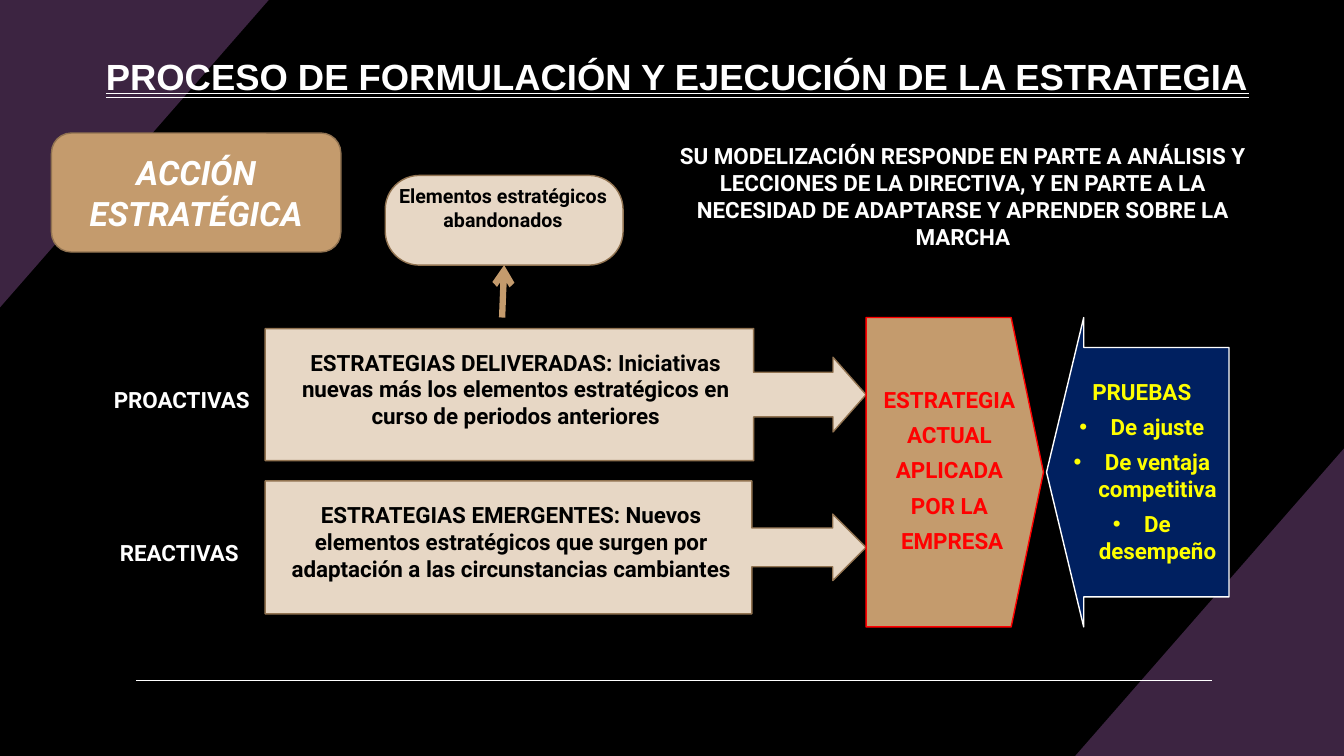
"""Slide on how strategy is formulated and carried out, from proactive and reactive sources to testing."""
from dataclasses import dataclass

from lxml.etree import SubElement
from pptx import Presentation
from pptx.dml.color import RGBColor
from pptx.enum.shapes import MSO_CONNECTOR, MSO_SHAPE
from pptx.enum.text import MSO_ANCHOR, MSO_UNDERLINE, PP_ALIGN
from pptx.oxml.ns import qn
from pptx.util import Inches, Pt


@dataclass(frozen=True)
class Theme:
    black: str = "000000"
    white: str = "FFFFFF"
    plum: str = "3C2441"
    tan: str = "C49B6D"
    brown: str = "917351"
    sand: str = "E7D7C5"
    red: str = "FF0000"
    navy: str = "002060"
    yellow: str = "FFFF00"
    font: str = "Roboto"
    title_font: str = "Arial"
    title: int = 26
    heading: int = 24
    body: int = 16
    small: int = 14


T = Theme()
WIDTH, HEIGHT = Inches(13.33), Inches(7.5)

CORNERS = [
    [(100, 59.33), (100, 100), (80, 100)],
    [(0, 40.67), (0, 0), (20, 0)],
]
FOOT_RULE = [(10.13, 90), (90.17, 90)]
ABANDON_ARROW = [(37.36, 42), (37.51, 35.07)]

SHAPES = {
    "action": (MSO_SHAPE.ROUNDED_RECTANGLE, (3.83, 17.6, 21.53, 15.73), [], T.tan, T.brown),
    "deliberate": (MSO_SHAPE.RIGHT_ARROW_CALLOUT, (19.73, 43.47, 44.71, 17.47),
                   [0.338, 0.283, 0.25, 0.813], T.sand, T.brown),
    "emergent": (MSO_SHAPE.RIGHT_ARROW_CALLOUT, (19.73, 63.6, 44.71, 17.6),
                 [0.291, 0.25, 0.25, 0.81], T.sand, T.brown),
    "current": (MSO_SHAPE.PENTAGON, (64.44, 42, 13.2, 40.93), [0.182], T.tan, T.red),
    "abandoned": (MSO_SHAPE.ROUNDED_RECTANGLE, (28.66, 23.2, 17.7, 11.87), [0.38], T.sand, T.brown),
    "tests": (MSO_SHAPE.LEFT_ARROW, (77.87, 42, 13.58, 40.93), [0.806, 0.204], T.navy, T.white),
}

TITLE = "PROCESO DE FORMULACIÓN Y EJECUCIÓN DE LA ESTRATEGIA"
ACTION = "ACCIÓN ESTRATÉGICA"
CENTRED = [
    ((49.29, 18.13, 44.71, 15.73),
     "SU MODELIZACIÓN RESPONDE EN PARTE A ANÁLISIS Y LECCIONES DE LA DIRECTIVA, "
     "Y EN PARTE A LA NECESIDAD DE ADAPTARSE Y APRENDER SOBRE LA MARCHA", T.white, T.body),
    ((28.66, 23.73, 17.55, 10.8), "Elementos estratégicos abandonados", T.black, T.small),
    ((20.78, 45.47, 35.18, 12.13),
     "ESTRATEGIAS DELIVERADAS: Iniciativas nuevas más los elementos estratégicos "
     "en curso de periodos anteriores", T.black, T.body),
    ((19.28, 65.6, 37.51, 12.13),
     "ESTRATEGIAS EMERGENTES: Nuevos elementos estratégicos que surgen por adaptación "
     "a las circunstancias cambiantes", T.black, T.body),
]
ROW_LABELS = [
    ((7.73, 50.4, 14.03, 4.93), "PROACTIVAS"),
    ((8.18, 70.67, 14.03, 4.93), "REACTIVAS"),
]
CURRENT = ["ESTRATEGIA ", "ACTUAL ", "APLICADA ", "POR LA ", "EMPRESA"]
TESTS = ["PRUEBAS", "De ajuste", "De ventaja competitiva", "De desempeño"]


def point(x, y):
    return int(WIDTH * x / 100), int(HEIGHT * y / 100)


def box(area):
    return point(*area[:2]) + point(*area[2:])


def write(tf, lines, color, size, align=PP_ALIGN.CENTER, font=T.font, after=0):
    tf.word_wrap = True
    tf.text = "\n".join(lines)
    for p in tf.paragraphs:
        p.alignment = align
        p.space_after = Pt(after)
        for r in p.runs:
            r.font.name, r.font.size, r.font.bold = font, Pt(size), True
            r.font.color.rgb = RGBColor.from_string(color)
    return tf


def add_text(s, area, lines, color, size, **style):
    return write(s.shapes.add_textbox(*box(area)).text_frame, lines, color, size, **style)


def add_bullet(p):
    pPr = p._p.get_or_add_pPr()
    pPr.set("marL", str(Inches(0.31)))
    pPr.set("indent", str(-Inches(0.31)))
    SubElement(pPr, qn("a:buFont")).set("typeface", T.title_font)
    SubElement(pPr, qn("a:buChar")).set("char", "•")


def add_corner(s, points):
    start, *rest = [point(*xy) for xy in points]
    builder = s.shapes.build_freeform(*start)
    builder.add_line_segments(rest, close=True)
    sp = builder.convert_to_shape()
    sp.shadow.inherit = False
    sp.fill.solid()
    sp.fill.fore_color.rgb = RGBColor.from_string(T.plum)
    sp.line.fill.background()


def add_shape(s, kind, area, adjustments, fill, line):
    sp = s.shapes.add_shape(kind, *box(area))
    sp.shadow.inherit = False
    for i, value in enumerate(adjustments):
        sp.adjustments[i] = value
    sp.fill.solid()
    sp.fill.fore_color.rgb = RGBColor.from_string(fill)
    sp.line.color.rgb = RGBColor.from_string(line)
    sp.line.width = Pt(1)
    return sp


def add_line(s, ends, color, width):
    start, end = ends
    sp = s.shapes.add_connector(MSO_CONNECTOR.STRAIGHT, *point(*start), *point(*end))
    sp.line.color.rgb = RGBColor.from_string(color)
    sp.line.width = Pt(width)
    SubElement(sp._element.spPr, qn("a:effectLst"))
    return sp


def main():
    prs = Presentation()
    prs.slide_width, prs.slide_height = WIDTH, HEIGHT
    s = prs.slides.add_slide(prs.slide_layouts[6])
    s.background.fill.solid()
    s.background.fill.fore_color.rgb = RGBColor.from_string(T.black)

    for corner in CORNERS:
        add_corner(s, corner)
    add_line(s, FOOT_RULE, T.white, 1)
    tf = add_text(s, (6.83, 6.53, 87.17, 7.2), [TITLE], T.white, T.title, font=T.title_font)
    tf.paragraphs[0].runs[0].font.underline = MSO_UNDERLINE.DOUBLE_LINE

    shapes = {name: add_shape(s, *parts) for name, parts in SHAPES.items()}
    tf = write(shapes["action"].text_frame, [ACTION], T.white, T.heading)
    tf.vertical_anchor = MSO_ANCHOR.MIDDLE
    tf.paragraphs[0].runs[0].font.italic = True

    arrow = add_line(s, ABANDON_ARROW, T.tan, 4.5)
    arrow.end_connect(shapes["abandoned"], 2)
    SubElement(arrow.line._get_or_add_ln(), qn("a:tailEnd")).set("type", "arrow")

    for area, text, color, size in CENTRED:
        add_text(s, area, [text], color, size)
    for area, text in ROW_LABELS:
        add_text(s, area, [text], T.white, T.body, align=PP_ALIGN.LEFT)
    add_text(s, (64.44, 50.4, 12.83, 23.73), CURRENT, T.red, T.body, after=6)
    tf = add_text(s, (77.87, 49.33, 14.18, 26.27), TESTS, T.yellow, T.body, after=6)
    for p in tf.paragraphs[1:]:
        add_bullet(p)

    prs.save("out.pptx")


if __name__ == "__main__":
    main()
